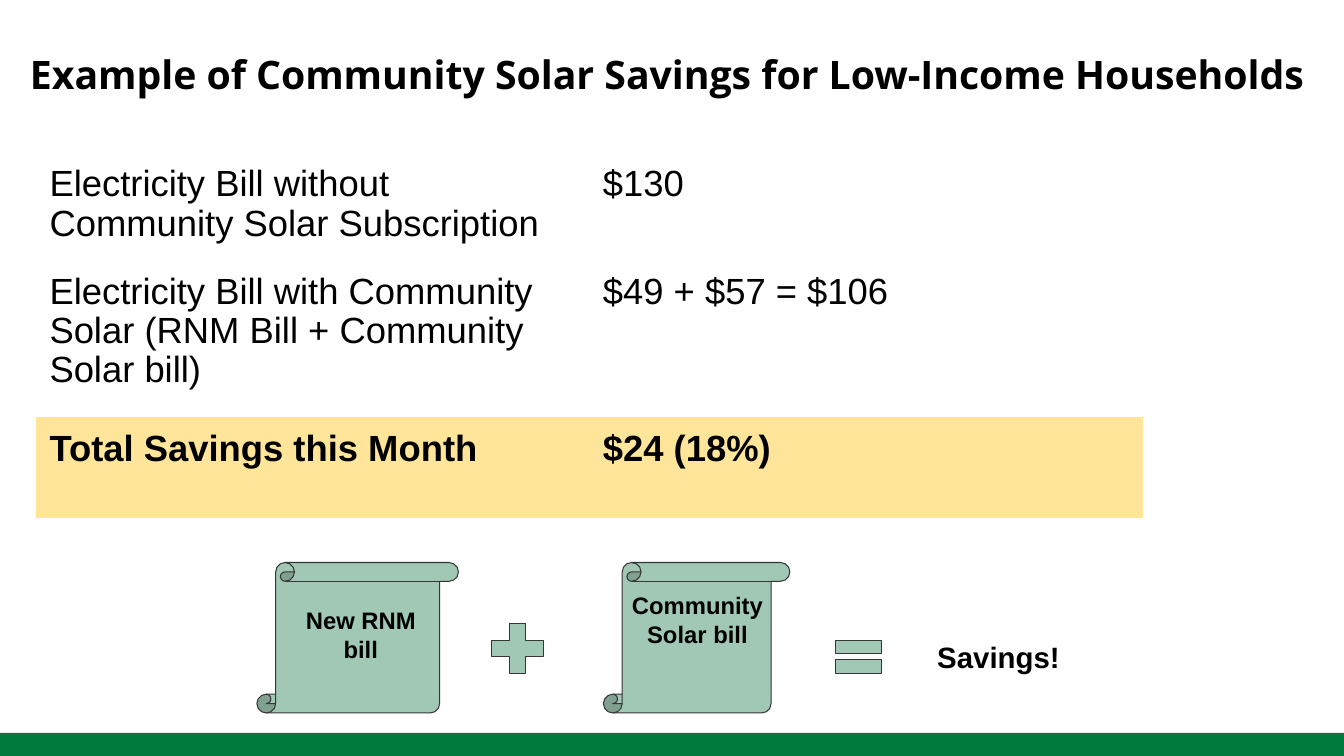
from pptx import Presentation
from pptx.dml.color import RGBColor
from pptx.enum.shapes import MSO_SHAPE as Shape
from pptx.enum.text import MSO_ANCHOR as Anchor, MSO_AUTO_SIZE as AutoSize, PP_ALIGN as Align
from pptx.util import Pt

BLACK = RGBColor(0x00, 0x00, 0x00)
GREEN = RGBColor(0x00, 0x79, 0x3C)
SAGE = RGBColor(0xA0, 0xC8, 0xB4)
OUTLINE = RGBColor(0x36, 0x36, 0x36)
YELLOW = RGBColor(0xFF, 0xE5, 0x99)
PLAIN_TABLE = "{2D5ABB26-0587-4C30-8999-92F81FD0307C}"


def write(frame, text, size, font="Arial", bold=True, align=Align.LEFT, inset=7.2, spacing=1.0):
    frame.word_wrap = True
    frame.margin_left = frame.margin_right = Pt(inset)
    frame.margin_top = frame.margin_bottom = Pt(inset)
    para = frame.paragraphs[0]
    para.alignment = align
    para.line_spacing = spacing
    span = para.add_run()
    span.text = text
    span.font.name = font
    span.font.size = Pt(size)
    span.font.bold = bold
    span.font.color.rgb = BLACK


deck = Presentation()
deck.slide_width = Pt(960)
deck.slide_height = Pt(540)
page = deck.slides.add_slide(deck.slide_layouts[5])

footer_bar = page.shapes.add_shape(Shape.RECTANGLE, 0, Pt(523.5), Pt(960), Pt(16.5))
footer_bar.shadow.inherit = False
footer_bar.fill.solid()
footer_bar.fill.fore_color.rgb = GREEN
footer_bar.line.fill.background()

title = page.shapes.title
title.left, title.top, title.width, title.height = Pt(11.8), Pt(23), Pt(936), Pt(60)
write(title.text_frame, "Example of Community Solar Savings for Low-Income Households",
      28, font="Open Sans", inset=9.6)
title.text_frame.vertical_anchor = Anchor.MIDDLE
title.text_frame.auto_size = AutoSize.NONE

bills = [
    ("Electricity Bill without Community Solar Subscription", "$130"),
    ("Electricity Bill with Community Solar (RNM Bill + Community Solar bill)", "$49 + $57 = $106"),
    ("Total Savings this Month", "$24 (18%)"),
]
row_heights = [77, 112, 72]
table = page.shapes.add_table(3, 2, Pt(25.8), Pt(108.8), Pt(790.6), Pt(sum(row_heights))).table
table.first_row = False
table.horz_banding = False
table._tbl.tblPr[0].text = PLAIN_TABLE
for column in table.columns:
    column.width = Pt(395.3)
for row, (height, texts) in enumerate(zip(row_heights, bills)):
    table.rows[row].height = Pt(height)
    is_total = row == len(bills) - 1
    for column, text in enumerate(texts):
        cell = table.cell(row, column)
        write(cell.text_frame, text, 26, bold=is_total, spacing=0.96)
        cell.margin_left = cell.margin_right = Pt(9.6)
        cell.margin_top = cell.margin_bottom = Pt(9.6)
        if is_total:
            cell.fill.solid()
            cell.fill.fore_color.rgb = YELLOW
        else:
            cell.fill.background()

symbols = [
    (Shape.VERTICAL_SCROLL, 183.5, 401.8, 144, 107.5, [0.125]),
    (Shape.VERTICAL_SCROLL, 431, 401.8, 133.2, 107.5, [0.125]),
    (Shape.MATH_PLUS, 344.2, 439.2, 51.1, 48.2, [0.235]),
    (Shape.MATH_EQUAL, 591.1, 449.3, 44.6, 39.6, [0.235, 0.118]),
]
for kind, left, top, width, height, adjustments in symbols:
    symbol = page.shapes.add_shape(kind, Pt(left), Pt(top), Pt(width), Pt(height))
    for position, value in enumerate(adjustments):
        symbol.adjustments[position] = value
    symbol.shadow.inherit = False
    symbol.fill.solid()
    symbol.fill.fore_color.rgb = SAGE
    symbol.line.color.rgb = OUTLINE
    symbol.line.width = Pt(0.75)

labels = [
    ("New RNM bill", 198, 425.5, 119.5, 76.3, 17, Align.CENTER),
    ("Community Solar bill", 438.5, 414.7, 119.5, 97.2, 17, Align.CENTER),
    ("Savings!", 662.4, 449.3, 125.3, 40.3, 21, Align.LEFT),
]
for text, left, top, width, height, size, align in labels:
    box = page.shapes.add_textbox(Pt(left), Pt(top), Pt(width), Pt(height))
    write(box.text_frame, text, size, align=align)

deck.save("out.pptx")
